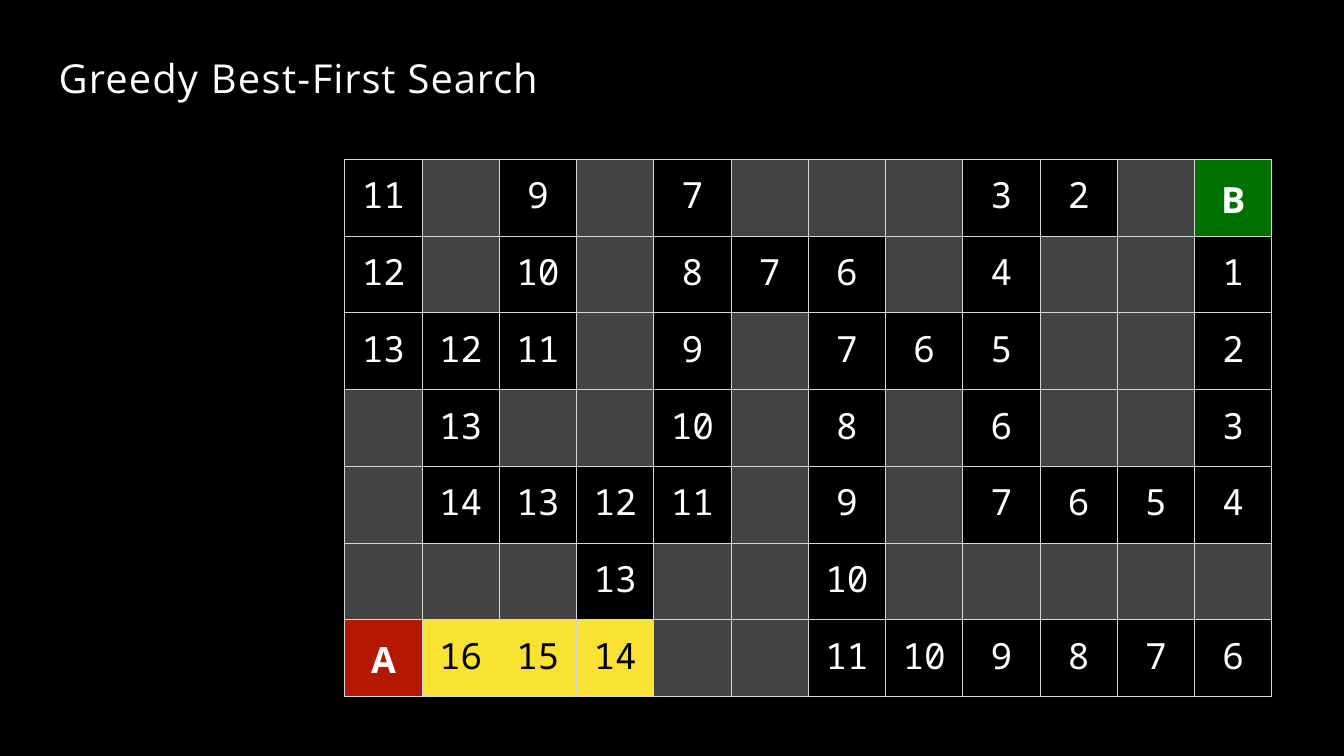
from lxml.etree import SubElement
from pptx import Presentation
from pptx.dml.color import RGBColor
from pptx.enum.text import MSO_ANCHOR, PP_ALIGN
from pptx.oxml import parse_xml
from pptx.oxml.ns import nsdecls, qn
from pptx.util import Cm, Pt

TITLE = [("Greedy ", 1.3), ("Best-", 1.6), ("First Search", 1.1)]
WALL = "#"
MAZE = [
    "11 #  9  #  7  #  #  #  3  2  #  B",
    "12 #  10 #  8  7  6  #  4  #  #  1",
    "13 12 11 #  9  #  7  6  5  #  #  2",
    "#  13 #  #  10 #  8  #  6  #  #  3",
    "#  14 13 12 11 #  9  #  7  6  5  4",
    "#  #  #  13 #  #  10 #  #  #  #  #",
    "A  16 15 14 #  #  11 10 9  8  7  6",
]
EXPLORED = {(6, 1), (6, 2), (6, 3)}
ENDPOINTS = {"A": ("B51700", 2), "B": ("017100", 3.5)}
BLACK, WHITE = "000000", "FFFFFF"
WALL_FILL, EXPLORED_FILL, GRID_LINE = "434343", "FAE232", "D6D7D6"
CELL_WIDTH, CELL_HEIGHT = Cm(3.21), Cm(3.19)


def color(code):
    return RGBColor.from_string(code)


def style_font(para, name, size, code, bold=False):
    font = para.font
    font.name, font.size, font.bold = name, Pt(size), bold
    font.color.rgb = color(code)


def add_span(para, text, spacing):
    span = para.add_run()
    span.text = text
    span._r.get_or_add_rPr().set("spc", str(round(spacing * 100)))


def set_margins(target, top):
    target.margin_left = target.margin_right = target.margin_bottom = 0
    target.margin_top = top


def add_borders(cell):
    properties = cell._tc.get_or_add_tcPr()
    for index, side in enumerate(("lnL", "lnR", "lnT", "lnB")):
        line = parse_xml(f'<a:{side} {nsdecls("a")} w="{Pt(1)}"/>')
        fill = SubElement(line, qn("a:solidFill"))
        SubElement(fill, qn("a:srgbClr"), val=GRID_LINE)
        properties.insert(index, line)


def fill_cell(cell, text, explored):
    endpoint = text in ENDPOINTS
    if endpoint:
        fill, spacing = ENDPOINTS[text]
    else:
        fill = WALL_FILL if text == WALL else EXPLORED_FILL if explored else BLACK
        spacing = -0.2 if len(text) == 2 else -0.5
    cell.fill.solid()
    cell.fill.fore_color.rgb = color(fill)
    add_borders(cell)
    set_margins(cell, Cm(0.65 if endpoint else 0.46))
    cell.vertical_anchor = MSO_ANCHOR.TOP
    if text == WALL:
        return
    para = cell.text_frame.paragraphs[0]
    para.alignment = PP_ALIGN.CENTER
    font_name = "Open Sans" if endpoint else "Noto Sans Mono"
    style_font(para, font_name, 42.5, BLACK if explored else WHITE, endpoint)
    add_span(para, text, spacing)


def add_title(page):
    box = page.shapes.add_textbox(Cm(2.44), Cm(2.18), Cm(32.13), Cm(2.06))
    frame = box.text_frame
    frame.word_wrap = True
    set_margins(frame, Cm(0.03))
    para = frame.paragraphs[0]
    style_font(para, "Open Sans", 47, WHITE)
    for text, spacing in TITLE:
        add_span(para, text, spacing)


def add_maze(page):
    rows = [line.split() for line in MAZE]
    row_count, column_count = len(rows), len(rows[0])
    table = page.shapes.add_table(
        row_count, column_count, Cm(14.33), Cm(6.62),
        CELL_WIDTH * column_count, CELL_HEIGHT * row_count,
    ).table
    table.first_row = table.horz_banding = False
    for column in table.columns:
        column.width = CELL_WIDTH
    for row_index, row in enumerate(rows):
        table.rows[row_index].height = CELL_HEIGHT
        for column_index, text in enumerate(row):
            explored = (row_index, column_index) in EXPLORED
            fill_cell(table.cell(row_index, column_index), text, explored)


def main():
    deck = Presentation()
    deck.slide_width, deck.slide_height = Cm(55.85), Cm(31.42)
    page = deck.slides.add_slide(deck.slide_layouts[6])
    page.background.fill.solid()
    page.background.fill.fore_color.rgb = color(BLACK)
    add_maze(page)
    add_title(page)
    deck.save("out.pptx")


if __name__ == "__main__":
    main()
